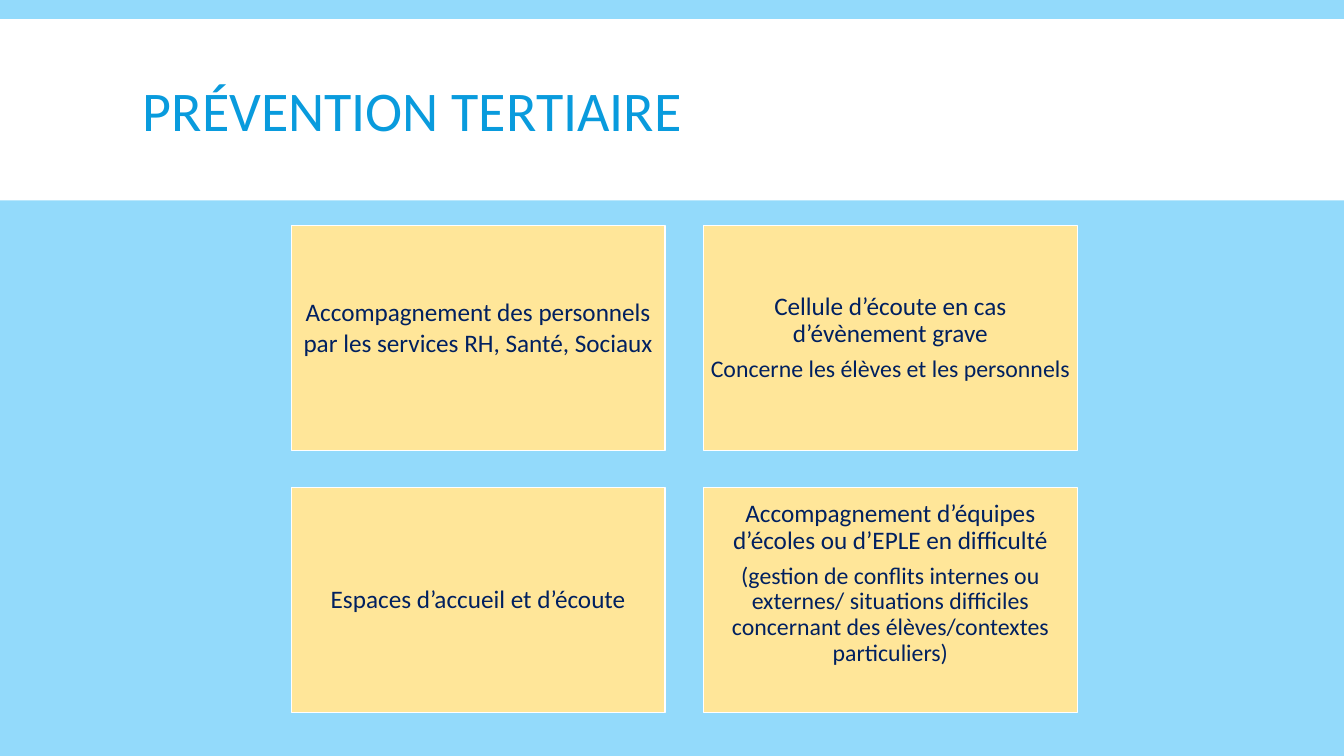
from pptx import Presentation
from pptx.dml.color import RGBColor
from pptx.enum.shapes import MSO_SHAPE
from pptx.enum.text import MSO_ANCHOR, PP_ALIGN
from pptx.util import Cm, Pt

SKY, WHITE, SAND, NAVY, AZURE = "93DAFB", "FFFFFF", "FFE699", "002060", "099BDD"
LEFT, TOP, WIDTH, HEIGHT = 7.34, 5.69, 9.42, 5.66
COLUMN_STEP, ROW_STEP = 10.39, 6.6
INSET = 0.18
MEASURES = [
    (["Accompagnement des personnels par les services RH, Santé, Sociaux"], 1.0, 0.56),
    (["Cellule d’écoute en cas d’évènement grave",
      "Concerne les élèves et les personnels"], 0.9, 0),
    (["Espaces d’accueil et d’écoute"], 0.9, 0),
    (["Accompagnement d’équipes d’écoles ou d’EPLE en difficulté",
      "(gestion de conflits internes ou externes/ situations difficiles "
      "concernant des élèves/contextes particuliers)"], 0.9, 0.83),
]


def color(value):
    return RGBColor.from_string(value)


class SlideBuilder:
    font = "Calibri"

    def __init__(self, page):
        self.page = page

    def background(self, fill):
        self.page.background.fill.solid()
        self.page.background.fill.fore_color.rgb = color(fill)

    def rectangle(self, left, top, width, height, fill, line=None):
        box = self.page.shapes.add_shape(
            MSO_SHAPE.RECTANGLE, Cm(left), Cm(top), Cm(width), Cm(height))
        box.shadow.inherit = False
        box.fill.solid()
        box.fill.fore_color.rgb = color(fill)
        if line:
            box.line.color.rgb = color(line)
            box.line.width = Pt(1)
        else:
            box.line.fill.background()
        return box

    def style_paragraph(self, para, text, size, ink, spacing):
        para.text = text
        para.line_spacing = spacing
        for span in para.runs:
            span.font.name = self.font
            span.font.size = Pt(size)
            span.font.color.rgb = color(ink)

    def title(self, text, left, top, width, height):
        box = self.page.shapes.add_textbox(Cm(left), Cm(top), Cm(width), Cm(height))
        frame = box.text_frame
        frame.word_wrap = True
        frame.vertical_anchor = MSO_ANCHOR.MIDDLE
        self.style_paragraph(frame.paragraphs[0], text, 40, AZURE, 0.85)

    def card(self, left, top, texts, spacing, lift):
        box = self.rectangle(left, top, WIDTH, HEIGHT, SAND, WHITE)
        frame = box.text_frame
        frame.word_wrap = True
        frame.vertical_anchor = MSO_ANCHOR.MIDDLE
        frame.margin_left = frame.margin_right = frame.margin_top = Cm(INSET)
        frame.margin_bottom = Cm(INSET + lift)
        frame.text = "\n".join(texts)
        for para, text, size in zip(frame.paragraphs, texts, (18, 17)):
            self.style_paragraph(para, text, size, NAVY, spacing)
            para.alignment = PP_ALIGN.CENTER
        for para in frame.paragraphs[:-1]:
            para.space_after = Pt(6)


def main():
    deck = Presentation()
    deck.slide_width, deck.slide_height = Cm(33.87), Cm(19.05)
    builder = SlideBuilder(deck.slides.add_slide(deck.slide_layouts[6]))
    builder.background(SKY)
    builder.rectangle(0, 0.48, 33.87, 4.57, WHITE)
    builder.title("PRÉVENTION TERTIAIRE", 3.35, 0.79, 27.18, 4.19)
    for index, (texts, spacing, lift) in enumerate(MEASURES):
        row, column = divmod(index, 2)
        builder.card(LEFT + column * COLUMN_STEP, TOP + row * ROW_STEP,
                     texts, spacing, lift)
    deck.save("out.pptx")


if __name__ == "__main__":
    main()
